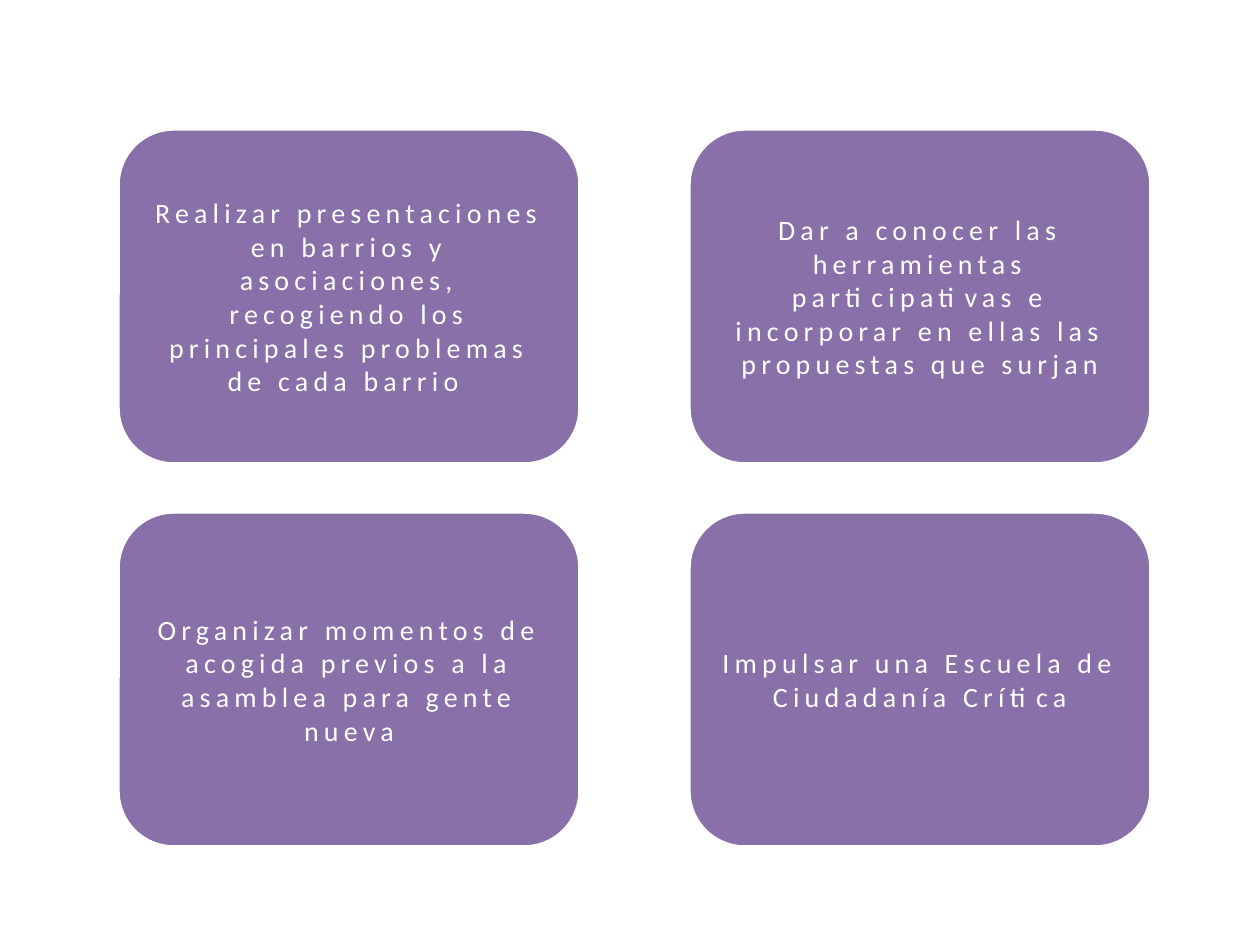
import pptx
import pptx.dml.color
import pptx.enum.shapes
import pptx.enum.text
import pptx.util

EMU_PER_PX = 914400 // 126
PURPLE = pptx.dml.color.RGBColor(0x89, 0x70, 0xA8)
WHITE = pptx.dml.color.RGBColor(0xFF, 0xFF, 0xFF)

CARD_LEFT, CARD_TOP = 118, 129
CARD_WIDTH, CARD_HEIGHT = 462, 335
COLUMN_STEP, ROW_STEP = 571, 383
ACTIONS = [
    "Realizar presentaciones en barrios y asociaciones, "
    "recogiendo los principales problemas de cada barrio ",
    "Dar a conocer las herramientas participativas e "
    "incorporar en ellas las propuestas que surjan",
    "Organizar momentos de acogida previos a la asamblea para gente nueva",
    "Impulsar una Escuela de Ciudadanía Crítica",
]


class SlideBuilder:
    font_name = "Calibri"
    font_size = pptx.util.Pt(16)
    letter_spacing = 300  # hundredths of a point
    outline_width = pptx.util.Pt(2)

    def __init__(self, slide):
        self.slide = slide

    def card(self, left, top, width, height, text):
        shape = self.slide.shapes.add_shape(
            pptx.enum.shapes.MSO_SHAPE.ROUNDED_RECTANGLE,
            *(length * EMU_PER_PX for length in (left, top, width, height)))
        shape.shadow.inherit = False
        shape.fill.solid()
        shape.fill.fore_color.rgb = PURPLE
        shape.line.color.rgb = WHITE
        shape.line.width = self.outline_width

        frame = shape.text_frame
        frame.word_wrap = True
        frame.vertical_anchor = pptx.enum.text.MSO_ANCHOR.MIDDLE
        paragraph = frame.paragraphs[0]
        paragraph.alignment = pptx.enum.text.PP_ALIGN.CENTER
        run = paragraph.add_run()
        run.text = text
        run.font._element.set("spc", str(self.letter_spacing))
        paragraph.font.name = self.font_name
        paragraph.font.size = self.font_size
        paragraph.font.color.rgb = WHITE


def main():
    presentation = pptx.Presentation()
    presentation.slide_width = pptx.util.Inches(10)
    presentation.slide_height = pptx.util.Inches(7.5)
    builder = SlideBuilder(
        presentation.slides.add_slide(presentation.slide_layouts[6]))
    for index, action in enumerate(ACTIONS):
        row, column = divmod(index, 2)
        builder.card(CARD_LEFT + column * COLUMN_STEP,
                     CARD_TOP + row * ROW_STEP,
                     CARD_WIDTH, CARD_HEIGHT, action)
    presentation.save("out.pptx")


if __name__ == "__main__":
    main()
